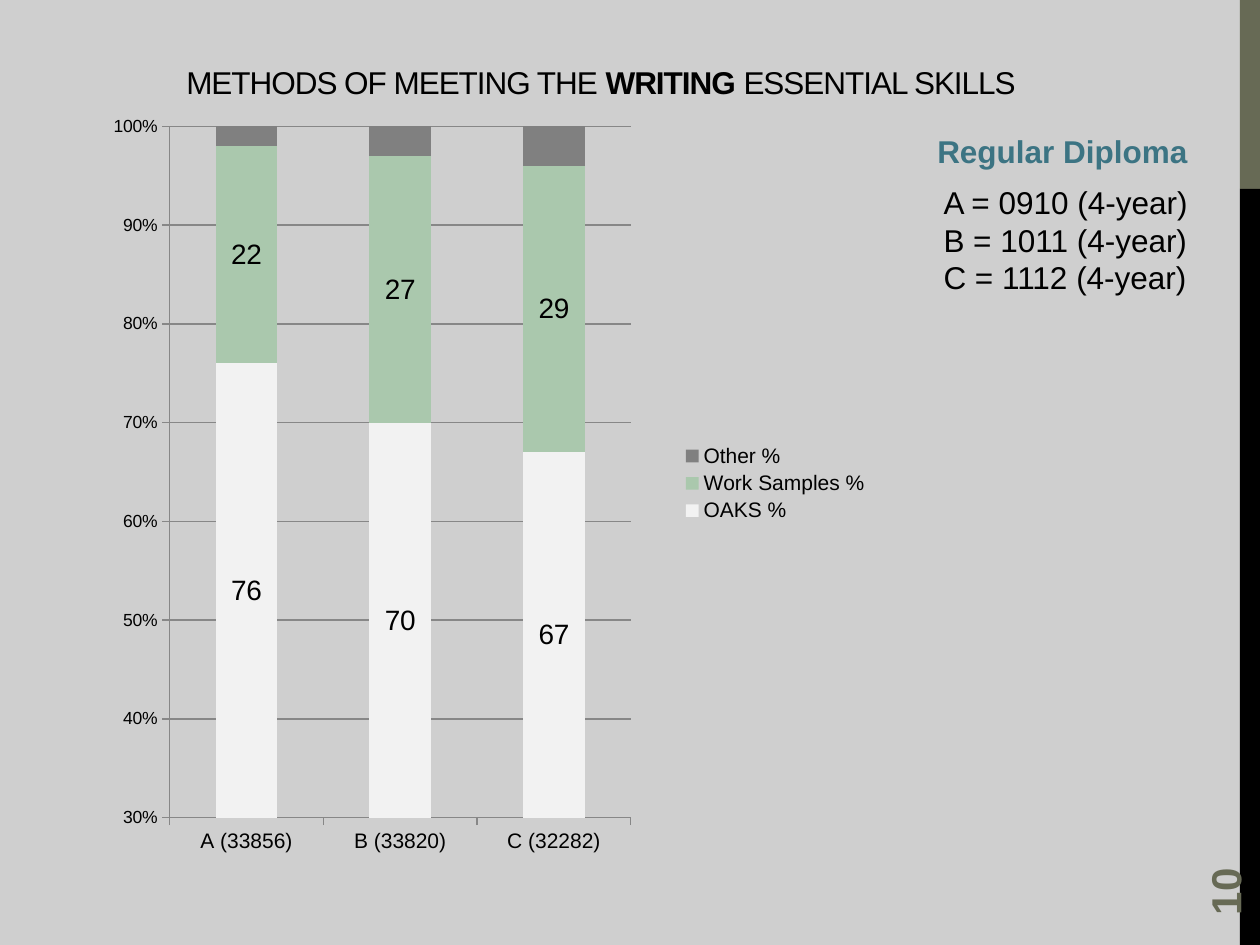
from dataclasses import dataclass

from lxml.etree import SubElement
from pptx import Presentation
from pptx.chart.data import CategoryChartData
from pptx.dml.color import RGBColor
from pptx.enum.chart import XL_CHART_TYPE, XL_LEGEND_POSITION, XL_TICK_MARK
from pptx.enum.shapes import MSO_SHAPE
from pptx.enum.text import MSO_ANCHOR, MSO_AUTO_SIZE, PP_ALIGN
from pptx.oxml.ns import qn
from pptx.util import Inches, Pt


@dataclass(frozen=True)
class Theme:
    """Colours, font and type sizes of the slide."""
    font: str = "Arial"
    paper: str = "CFCFCF"
    ink: str = "000000"
    olive: str = "676A55"
    teal: str = "3C7483"
    grid: str = "878787"
    series: tuple = ("F2F2F2", "AAC8AD", "808080")
    number_size: int = 24
    text_size: int = 18
    value_size: int = 16
    label_size: int = 12
    axis_size: int = 10


THEME = Theme()
WIDTH, HEIGHT = Inches(10), Inches(7.5)
STRIPE_LEFT, STRIPE_SPLIT = 0.984, 0.2
CATEGORIES = ("A (33856)", "B (33820)", "C (32282)")
SERIES = {
    "OAKS %": (76, 70, 67),
    "Work Samples %": (22, 27, 29),
    "Other %": (2, 3, 4),
}
COHORTS = ("A = 0910 (4-year)", "B = 1011 (4-year)", "C = 1112 (4-year)")


def share(left, top, width, height):
    """Turn shares of the slide into a left, top, width, height frame."""
    return (round(left * WIDTH), round(top * HEIGHT),
            round(width * WIDTH), round(height * HEIGHT))


def style(font, size, color=THEME.ink, bold=False):
    """Set the typeface, size, colour and weight of a font."""
    font.name, font.size, font.bold = THEME.font, Pt(size), bold
    font.color.rgb = RGBColor.from_string(color)


def add_run(para, text, size, color=THEME.ink, bold=False):
    """Append one styled run to a paragraph."""
    span = para.add_run()
    span.text = text
    style(span.font, size, color, bold)
    return span


def add_title(page):
    """Place the title placeholder and write its runs."""
    title = page.shapes.title
    title.left, title.top, title.width, title.height = share(0.096, 0.045, 0.762, 0.068)
    frame = title.text_frame
    frame.vertical_anchor, frame.auto_size = MSO_ANCHOR.BOTTOM, MSO_AUTO_SIZE.NONE
    para = frame.paragraphs[0]
    para.alignment = PP_ALIGN.CENTER
    for text, bold in (("METHODS OF MEETING THE ", False), ("WRITING ", True),
                       ("ESSENTIAL SKILLS", False)):
        span = add_run(para, text, THEME.text_size, bold=bold)
        span.font._element.set("spc", "-60")


def add_stripe(page, top, bottom, color):
    """Draw one part of the stripe along the right edge."""
    stripe = page.shapes.add_shape(
        MSO_SHAPE.RECTANGLE, *share(STRIPE_LEFT, top, 1 - STRIPE_LEFT, bottom - top))
    stripe.shadow.inherit = False
    stripe.fill.solid()
    stripe.fill.fore_color.rgb = RGBColor.from_string(color)
    stripe.line.fill.background()


def add_text(page, frame, lines, size=THEME.text_size, color=THEME.ink, bold=False):
    """Add a text box with one paragraph for each line."""
    box = page.shapes.add_textbox(*share(*frame))
    box.text_frame.word_wrap = False
    for index, line in enumerate(lines):
        para = box.text_frame.paragraphs[0] if index == 0 else box.text_frame.add_paragraph()
        add_run(para, line, size, color, bold)
    return box


def add_page_number(page, number):
    """Add the page number, turned to read upwards."""
    box = add_text(page, (0.9, 0.859, 0.144, 0.053), [number],
                   THEME.number_size, THEME.olive, True)
    box.text_frame.word_wrap = True
    box.text_frame.vertical_anchor = MSO_ANCHOR.MIDDLE
    box.rotation = 270


def set_plot_area(chart, **shares):
    """Fix the inner plot area as shares of the chart."""
    plot_area = chart._chartSpace.chart.plotArea
    layout = plot_area.find(qn("c:layout"))
    if layout is None:
        layout = SubElement(plot_area, qn("c:layout"))
        plot_area.insert(0, layout)
    manual = SubElement(layout, qn("c:manualLayout"))
    settings = {"layoutTarget": "inner", "xMode": "edge", "yMode": "edge", **shares}
    for name, value in settings.items():
        SubElement(manual, qn(f"c:{name}")).set("val", str(value))


def style_axes(chart):
    """Set the scale, ticks, lines and labels of both axes."""
    values, categories = chart.value_axis, chart.category_axis
    values.minimum_scale, values.maximum_scale, values.major_unit = 0.3, 1, 0.1
    values.has_major_gridlines = True
    values.tick_labels.number_format = "0%"
    values.tick_labels.number_format_is_linked = False
    for axis, size in ((values, THEME.axis_size), (categories, THEME.label_size)):
        axis.major_tick_mark = XL_TICK_MARK.OUTSIDE
        style(axis.tick_labels.font, size)
    for line in (values.format.line, categories.format.line, values.major_gridlines.format.line):
        line.color.rgb = RGBColor.from_string(THEME.grid)
        line.width = Pt(0.75)


def style_series(plot):
    """Colour the series and label all but the last."""
    plot.gap_width, plot.overlap, plot.vary_by_categories = 150, 100, False
    for series, color in zip(plot.series, THEME.series):
        series.format.fill.solid()
        series.format.fill.fore_color.rgb = RGBColor.from_string(color)
    for series in list(plot.series)[:-1]:
        labels = series.data_labels
        labels.show_value = True
        labels.number_format, labels.number_format_is_linked = "0", False
        style(labels.font, THEME.value_size)


def add_methods_chart(page):
    """Add the stacked chart of methods for each cohort."""
    data = CategoryChartData()
    data.categories = CATEGORIES
    for name, values in SERIES.items():
        data.add_series(name, values)
    chart = page.shapes.add_chart(
        XL_CHART_TYPE.COLUMN_STACKED_100, *share(0.067, 0.113, 0.633, 0.797), data).chart
    style(chart.font, THEME.axis_size)
    chart.has_title = False
    chart.has_legend = True
    chart.legend.position = XL_LEGEND_POSITION.RIGHT
    chart.legend.include_in_layout = False
    style(chart.legend.font, THEME.label_size)
    style_axes(chart)
    style_series(chart.plots[0])
    set_plot_area(chart, x=0.107, y=0.026, w=0.578, h=0.918)


def main():
    """Build the slide and save the deck."""
    deck = Presentation()
    deck.slide_width, deck.slide_height = WIDTH, HEIGHT
    page = deck.slides.add_slide(deck.slide_layouts[5])
    page.background.fill.solid()
    page.background.fill.fore_color.rgb = RGBColor.from_string(THEME.paper)
    add_stripe(page, 0, STRIPE_SPLIT, THEME.olive)
    add_stripe(page, STRIPE_SPLIT, 1, THEME.ink)
    add_page_number(page, "10")
    add_title(page)
    add_text(page, (0.734, 0.133, 0.221, 0.053), ["Regular Diploma"],
             color=THEME.teal, bold=True)
    add_text(page, (0.739, 0.187, 0.216, 0.135), COHORTS)
    add_methods_chart(page)
    deck.save("out.pptx")


if __name__ == "__main__":
    main()
